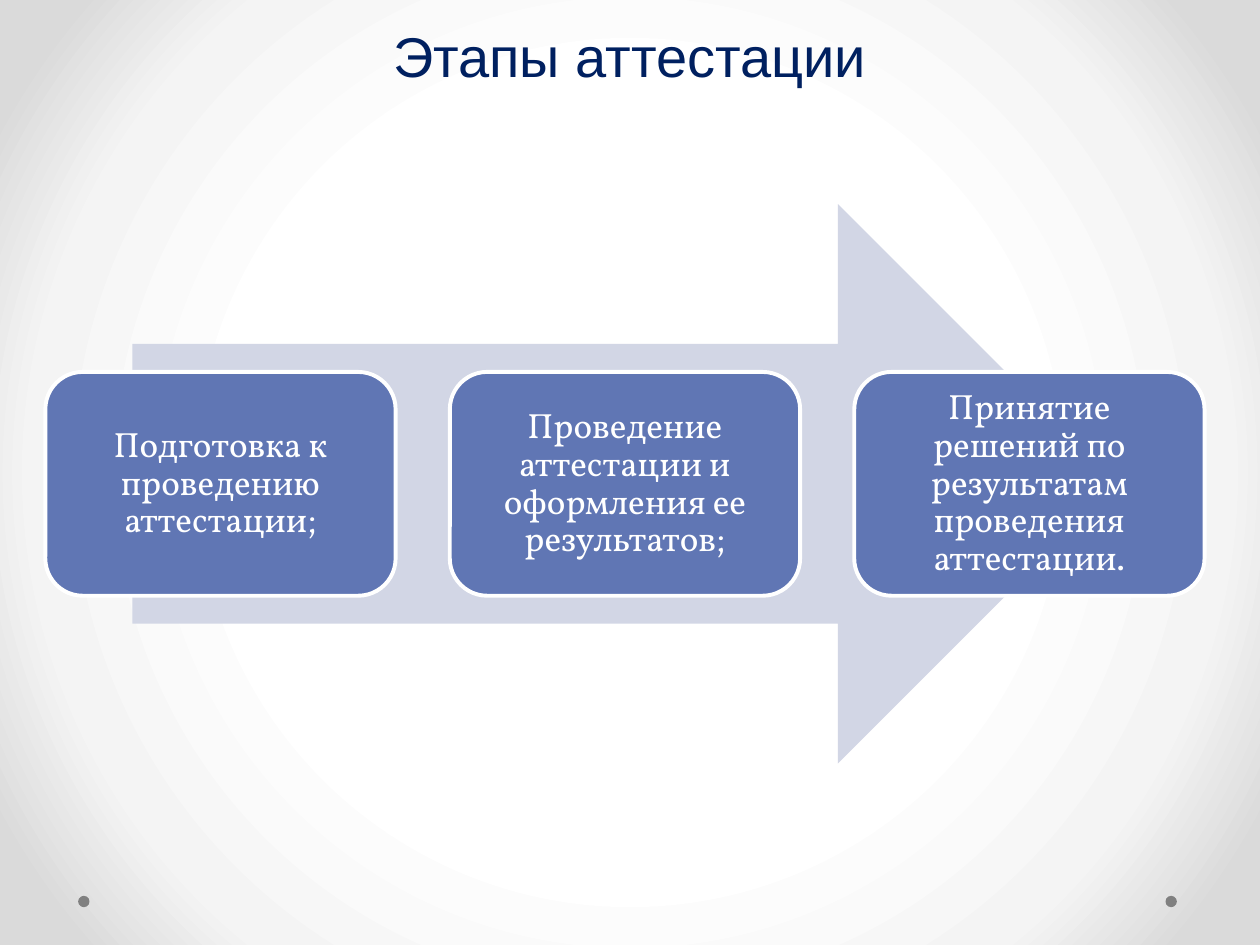
from lxml import etree
from pptx import Presentation
from pptx.dml.color import RGBColor
from pptx.enum.shapes import MSO_SHAPE
from pptx.enum.text import MSO_ANCHOR, PP_ALIGN
from pptx.oxml.ns import qn
from pptx.util import Inches, Pt

ELLIPSE = MSO_SHAPE.OVAL
ARROW = MSO_SHAPE.RIGHT_ARROW
ROUNDED = MSO_SHAPE.ROUNDED_RECTANGLE
CENTER = PP_ALIGN.CENTER
MIDDLE = MSO_ANCHOR.MIDDLE
BOTTOM = MSO_ANCHOR.BOTTOM

WIDTH, HEIGHT = 10, 7.5
BACKGROUND_STOPS = [(50, "FFFFFF"), (76, "F4F4F4"), (92, "DADADA")]
STAGES = [
    "Подготовка к проведению аттестации;",
    "Проведение аттестации и оформления ее результатов;",
    "Принятие решений по результатам проведения аттестации.",
]
TITLE_FORMAT = {"name": "Arial", "size": Pt(32)}
STAGE_FORMAT = {"name": "Vollkorn", "size": Pt(20)}


def rgb(value):
    return RGBColor.from_string(value)


def add_filled_shape(slide, kind, box, fill, line=None):
    shape = slide.shapes.add_shape(kind, *(Inches(length) for length in box))
    shape.shadow.inherit = False
    shape.fill.solid()
    shape.fill.fore_color.rgb = rgb(fill)
    if line:
        shape.line.color.rgb = rgb(line)
        shape.line.width = Pt(2.25)
    else:
        shape.line.fill.background()
    return shape


def write_text(shape, text, font_format, color, spacing, anchor, margin):
    frame = shape.text_frame
    frame_format = {"word_wrap": True, "vertical_anchor": anchor}
    for side in ("left", "top", "right", "bottom"):
        frame_format[f"margin_{side}"] = Inches(margin)
    for name, value in frame_format.items():
        setattr(frame, name, value)
    paragraph = frame.paragraphs[0]
    paragraph.alignment = CENTER
    paragraph.line_spacing = spacing
    run = paragraph.add_run()
    run.text = text
    for name, value in font_format.items():
        setattr(run.font, name, value)
    run.font.color.rgb = rgb(color)


def paint_background(slide):
    slide.background.fill.solid()
    properties = slide.element.find(".//" + qn("p:bgPr"))
    gradient = etree.Element(qn("a:gradFill"), rotWithShape="1")
    stops = etree.SubElement(gradient, qn("a:gsLst"))
    for position, color in BACKGROUND_STOPS:
        stop = etree.SubElement(stops, qn("a:gs"), pos=str(position * 1000))
        etree.SubElement(stop, qn("a:srgbClr"), val=color)
    circle = etree.SubElement(gradient, qn("a:path"), path="circle")
    etree.SubElement(circle, qn("a:fillToRect"), l="50000", t="50000", r="50000", b="50000")
    properties.replace(properties.find(qn("a:solidFill")), gradient)


def add_corner_dots(slide, box):
    left, top, width, size = box
    for dot_left in (left + width - size, left):
        add_filled_shape(slide, ELLIPSE, (dot_left, top, size, size), "808080")


def add_title(slide, box):
    title = slide.shapes.add_textbox(*(Inches(length) for length in box))
    write_text(title, "Этапы аттестации", TITLE_FORMAT, "002060", Pt(58), BOTTOM, 0.05)


def add_process(slide, box):
    left, top, width, height = box
    arrow_width = width * 0.85
    arrow_box = (left + (width - arrow_width) / 2, top, arrow_width, height)
    add_filled_shape(slide, ARROW, arrow_box, "D2D6E5")

    card_width, card_height = 2.78, height * 0.4
    step = (width - card_width) / (len(STAGES) - 1)
    card_top = top + (height - card_height) / 2
    for index, text in enumerate(STAGES):
        card_box = (left + index * step, card_top, card_width, card_height)
        card = add_filled_shape(slide, ROUNDED, card_box, "6076B4", "FFFFFF")
        write_text(card, text, STAGE_FORMAT, "FFFFFF", 0.9, MIDDLE, 0.08)


def main():
    presentation = Presentation()
    presentation.slide_width = Inches(WIDTH)
    presentation.slide_height = Inches(HEIGHT)
    slide = presentation.slides.add_slide(presentation.slide_layouts[6])
    paint_background(slide)
    add_corner_dots(slide, (0.62, 7.11, 8.72, 0.09))
    add_title(slide, (0, -0.5, WIDTH, 1.25))
    add_process(slide, (0.36, 1.62, 9.2, 4.44))
    presentation.save("out.pptx")


if __name__ == "__main__":
    main()
